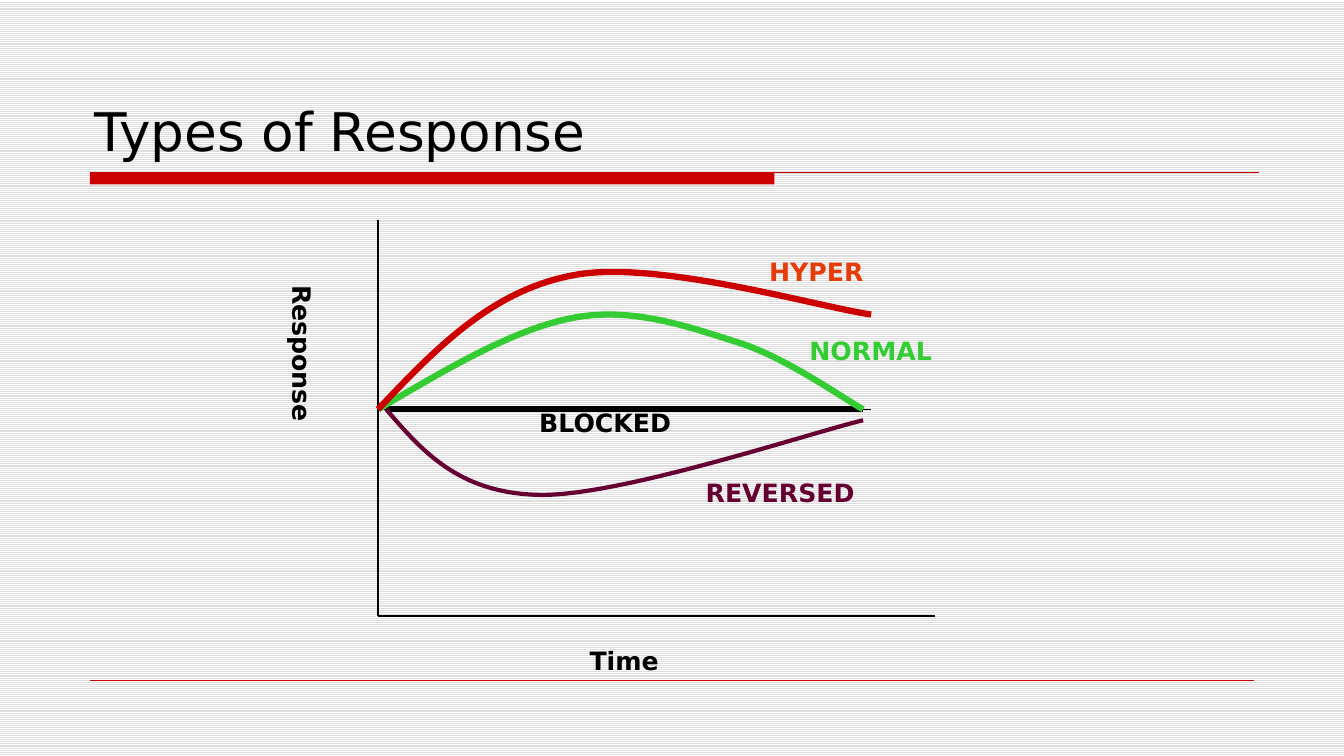
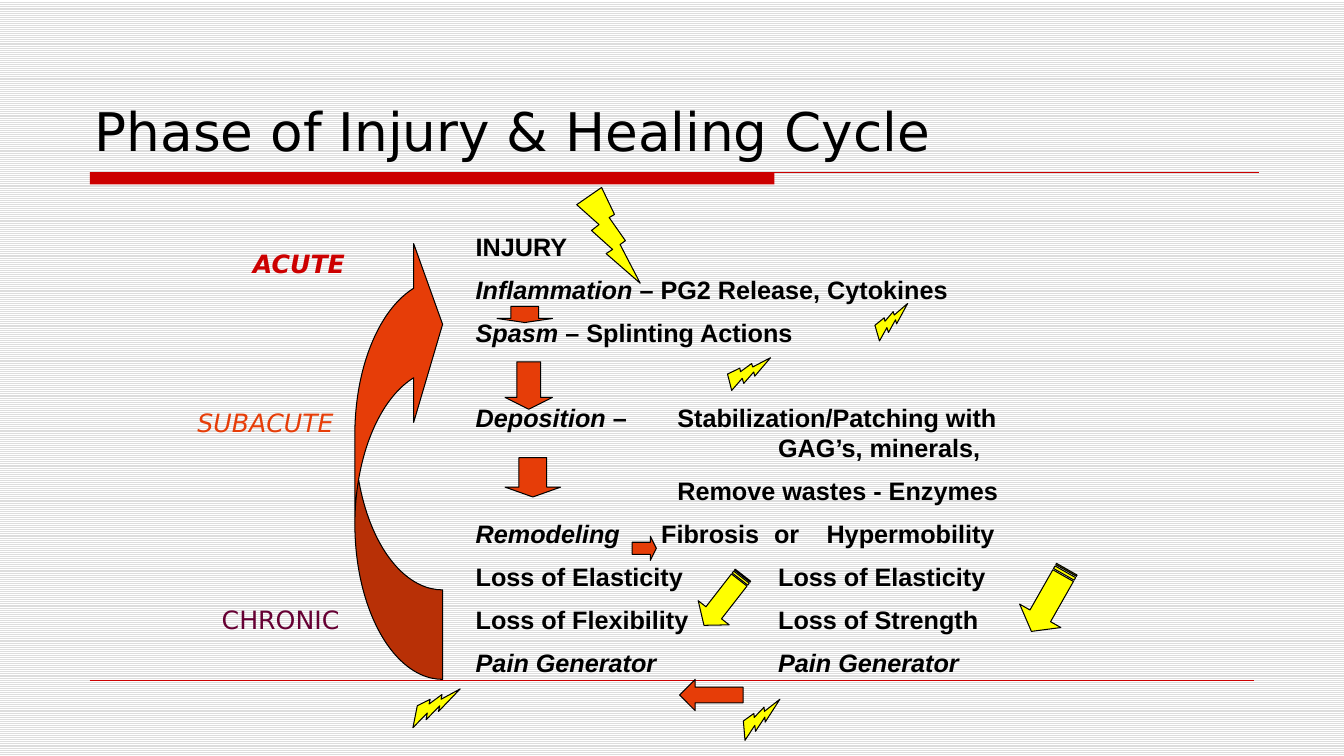
from lxml.etree import SubElement
from pptx import Presentation
from pptx.dml.color import RGBColor
from pptx.enum.dml import MSO_PATTERN
from pptx.enum.shapes import MSO_CONNECTOR, MSO_SHAPE as SHAPE
from pptx.enum.text import MSO_ANCHOR, MSO_AUTO_SIZE, PP_ALIGN
from pptx.oxml.ns import qn
from pptx.util import Emu, Pt

PX = 9144
HEAD_FONT, BODY_FONT = "DejaVu Sans", "Arial"
BLACK, RED, ORANGE = "000000", "CC0000", "E63D08"
GREEN, PURPLE, YELLOW = "33CC33", "660033", "FFFF00"

CURVES = [
    (GREEN, 4.5, [(375, 406), (443, 366), (510, 326), (570, 315), (630, 304),
                  (688, 326), (736, 341), (783, 357), (836, 395), (856, 406)]),
    (RED, 4.5, [(375, 406), (431, 347), (487, 288), (569, 273),
                (650, 257), (814, 305), (864, 312)]),
    (PURPLE, 3, [(383, 406), (419, 448), (455, 489), (534, 491),
                 (613, 493), (802, 430), (856, 417)]),
]
AXES = [
    ((375, 218), (375, 611), 1.5),
    ((375, 611), (927, 611), 1.5),
    ((375, 406), (864, 406), 0.75),
    ((383, 406), (856, 406), 4.5),
]
RESPONSES = [
    ("BLOCKED", (525, 399, 157, 40), BLACK),
    ("REVERSED", (690, 469, 181, 40), PURPLE),
    ("NORMAL", (793, 328, 157, 40), GREEN),
    ("HYPER", (753, 249, 142, 40), ORANGE),
]
PHASES = [
    ("ACUTE", (241, 241, 134, 40), RED, True, True),
    ("SUBACUTE", (186, 399, 157, 40), ORANGE, False, True),
    ("CHRONIC", (210, 595, 142, 40), PURPLE, False, False),
]
CYCLE = [
    {"rest": "INJURY"},
    {"italic": "Inflammation", "rest": " – PG2 Release, Cytokines"},
    {"italic": "Spasm ", "rest": "– Splinting Actions"},
    {"italic": "Deposition", "rest": " – \tStabilization/Patching with",
     "stops": (200,), "before": 39},
    {"rest": "GAG’s, minerals,", "indent": 300, "before": 0},
    {"rest": "Remove wastes - Enzymes", "indent": 200},
    {"italic": "Remodeling", "rest": "\tFibrosis\tor\tHypermobility",
     "stops": (184, 296, 348)},
    {"rest": "Loss of Elasticity\tLoss of Elasticity", "stops": (300,)},
    {"rest": "Loss of Flexibility\tLoss of Strength", "stops": (300,)},
    {"italic": "Pain Generator\tPain Generator", "stops": (300,)},
]
BLOCK_ARROWS = [
    (SHAPE.DOWN_ARROW, (493, 304, 55, 16)),
    (SHAPE.DOWN_ARROW, (501, 454, 55, 39)),
    (SHAPE.DOWN_ARROW, (501, 359, 47, 47)),
    (SHAPE.RIGHT_ARROW, (627, 532, 24, 24)),
]
STRIPED_ARROWS = [((686, 576, 63, 39), 127.9), ((1005, 572, 71, 47), 119.6)]
BOLTS = [
    ((403, 686, 55, 31), 295.8),
    ((730, 698, 47, 31), 281.9),
    ((864, 304, 39, 31), 273.8),
    ((722, 351, 39, 39), 280.5),
    ((572, 186, 63, 95), 0),
]


def px(n):
    """Turn px into EMU."""
    return Emu(n * PX)


def rgb(value):
    """Turn a hex string into a colour."""
    return RGBColor.from_string(value)


def add_run(p, text, color=BLACK, size=18, font=HEAD_FONT, bold=False, italic=False):
    """Append one formatted run to a paragraph."""
    r = p.add_run()
    r.text = text
    f = r.font
    f.name, f.size, f.bold, f.italic = font, Pt(size), bold, italic
    f.color.rgb = rgb(color)


def add_box(slide, box):
    """Add a wrapping text box."""
    sp = slide.shapes.add_textbox(*map(px, box))
    sp.text_frame.word_wrap = True
    return sp


def add_label(slide, text, box, color=BLACK, bold=True, italic=False, align=PP_ALIGN.LEFT):
    """Add a one-line label."""
    sp = add_box(slide, box)
    p = sp.text_frame.paragraphs[0]
    p.alignment = align
    add_run(p, text, color, bold=bold, italic=italic)
    return sp


def add_line(slide, start, end, width, color=BLACK):
    """Add a straight line without shadow."""
    ln = slide.shapes.add_connector(MSO_CONNECTOR.STRAIGHT, *map(px, start + end))
    ln.line.color.rgb = rgb(color)
    ln.line.width = Pt(width)
    SubElement(ln.element.spPr, qn("a:effectLst"))
    return ln


def add_preset(slide, kind, box, fill, line=BLACK, rotation=0, adjust=()):
    """Add a filled preset shape."""
    sp = slide.shapes.add_shape(kind, *map(px, box))
    sp.shadow.inherit = False
    sp.fill.solid()
    sp.fill.fore_color.rgb = rgb(fill)
    sp.line.color.rgb = rgb(line)
    sp.line.width = Pt(0.75)
    sp.rotation = rotation
    for i, value in enumerate(adjust):
        sp.adjustments[i] = value
    return sp


def add_curve(slide, color, width, points):
    """Add an open Bezier curve from a start and triples of points."""
    fb = slide.shapes.build_freeform(*points[0], scale=PX)
    fb.add_line_segments(points[1:], close=False)
    sp = fb.convert_to_shape()
    sp.shadow.inherit = False
    sp.fill.background()
    sp.line.color.rgb = rgb(color)
    sp.line.width = Pt(width)
    outline = sp.element.find(".//" + qn("a:path"))
    legs = outline.findall(qn("a:lnTo"))
    for i in range(0, len(legs), 3):
        bezier = SubElement(outline, qn("a:cubicBezTo"))
        for leg in legs[i:i + 3]:
            bezier.append(leg[0])
            outline.remove(leg)


def add_step(p, italic="", rest="", stops=(), indent=0, before=9):
    """Fill one paragraph of the healing cycle."""
    p.space_before = Pt(before)
    pPr = p._p.get_or_add_pPr()
    pPr.set("marL", str(px(indent)))
    if stops:
        tabs = SubElement(pPr, qn("a:tabLst"))
        for stop in stops:
            SubElement(tabs, qn("a:tab"), pos=str(px(stop)), algn="l")
    for text, slanted in ((italic, True), (rest, False)):
        if text:
            add_run(p, text, font=BODY_FONT, bold=True, italic=slanted)


def style_layout(layout):
    """Set the shared background and title place."""
    fill = layout.background.fill
    fill.patterned()
    fill.pattern = MSO_PATTERN.LIGHT_HORIZONTAL
    fill.fore_color.rgb = rgb("DDDDDD")
    fill.back_color.rgb = rgb("FFFFFF")
    title, *others = layout.placeholders
    title.left, title.top, title.width, title.height = map(px, (84, 33, 1167, 133))
    title.text_frame.vertical_anchor = MSO_ANCHOR.BOTTOM
    title.text_frame.auto_size = MSO_AUTO_SIZE.NONE
    for ph in others:
        ph.element.getparent().remove(ph.element)


def add_bands(layout, slide):
    """Draw the red bands and hand them over to the layout."""
    bands = [
        add_preset(slide, SHAPE.RECTANGLE, (89, 171, 679, 12), RED),
        add_line(slide, (89, 171), (1249, 171), 0.75, RED),
        add_line(slide, (89, 675), (1244, 675), 0.25, RED),
    ]
    bands[0].line.fill.background()
    for sp in bands:
        layout.shapes.element.append(sp.element)


def add_slide(prs, layout, title):
    """Add a slide with its formatted title."""
    slide = prs.slides.add_slide(layout)
    p = slide.shapes.title.text_frame.paragraphs[0]
    p.alignment = PP_ALIGN.LEFT
    add_run(p, title, size=38)
    return slide


def draw_responses(slide):
    """Draw the response curves over time."""
    for start, end, width in AXES:
        add_line(slide, start, end, width)
    add_label(slide, "Time", (438, 635, 362, 40), align=PP_ALIGN.CENTER)
    sp = add_label(slide, "Response", (270, 273, 50, 276))
    sp.element.find(".//" + qn("a:bodyPr")).set("vert", "eaVert")
    for curve in CURVES:
        add_curve(slide, *curve)
    for label in RESPONSES:
        add_label(slide, *label)


def draw_cycle(slide):
    """Draw the phases of injury and healing."""
    tf = add_box(slide, (462, 225, 543, 522)).text_frame
    for i, step in enumerate(CYCLE):
        add_step(tf.add_paragraph() if i else tf.paragraphs[0], **step)
    for kind, box in BLOCK_ARROWS:
        add_preset(slide, kind, box, ORANGE, adjust=(0.5, 0.25))
    for box, angle in STRIPED_ARROWS:
        head = box[2] / box[3] / 4
        add_preset(slide, SHAPE.STRIPED_RIGHT_ARROW, box, YELLOW,
                   rotation=angle, adjust=(0.5, head))
    add_preset(slide, SHAPE.LEFT_ARROW, (674, 674, 63, 31), ORANGE, adjust=(0.5, 0.5))
    sp = add_preset(slide, SHAPE.CURVED_RIGHT_ARROW, (352, 233, 87, 441), ORANGE,
                    adjust=(1.02, 2.04, 0.33))
    sp.element.find(".//" + qn("a:xfrm")).set("flipV", "1")
    for box, angle in BOLTS:
        add_preset(slide, SHAPE.LIGHTNING_BOLT, box, YELLOW, rotation=angle)
    for label in PHASES:
        add_label(slide, *label)


def main():
    """Build and save the presentation."""
    prs = Presentation()
    prs.slide_width, prs.slide_height = px(1333), px(750)
    layout = prs.slide_layouts[5]
    style_layout(layout)
    slide = add_slide(prs, layout, "Types of Response")
    add_bands(layout, slide)
    draw_responses(slide)
    draw_cycle(add_slide(prs, layout, "Phase of Injury & Healing Cycle"))
    prs.save("out.pptx")


if __name__ == "__main__":
    main()
